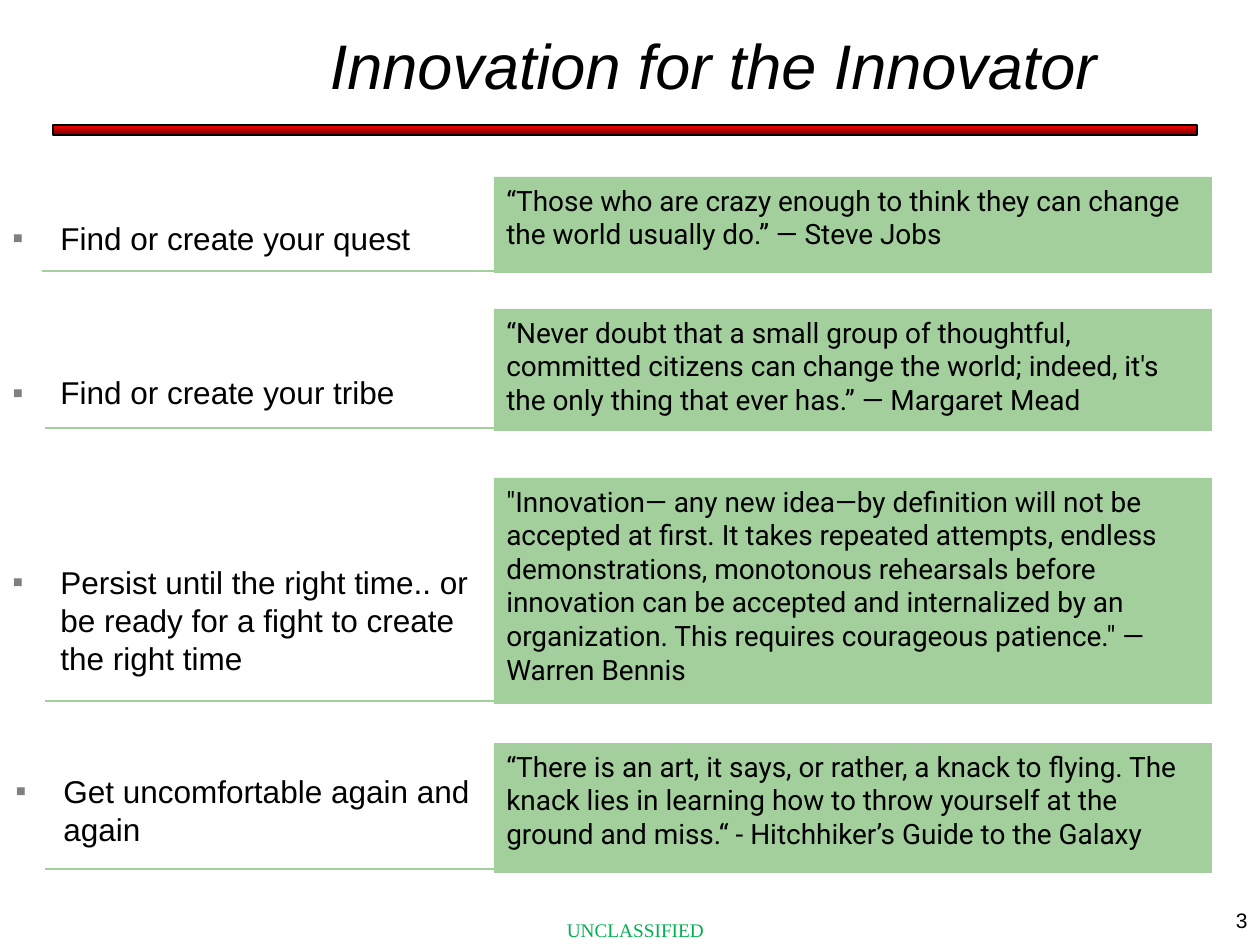
import pptx
import pptx.util
import pptx.dml.color
import pptx.enum.shapes
import pptx.enum.text
import pptx.oxml.ns
from lxml import etree

PX = 914400 // 126
ALIGN = pptx.enum.text.PP_ALIGN
ANCHOR = pptx.enum.text.MSO_ANCHOR
GREEN = "A3CF9D"
QUOTE_LEFT, QUOTE_WIDTH = 494, 718
POINT_WIDTH, RULE_WIDTH = 491, 767
INDENT = 48

ROWS = [
    {"point": "Find or create your quest", "point_box": (0, 213, 77),
     "quote": "“Those who are crazy enough to think they can change the world usually do.” ― Steve Jobs",
     "quote_box": (177, 96), "rule": (42, 271)},
    {"point": "Find or create your tribe", "point_box": (0, 367, 71),
     "quote": "“Never doubt that a small group of thoughtful, committed citizens can change the world; "
              "indeed, it's the only thing that ever has.” ― Margaret Mead",
     "quote_box": (309, 122), "rule": (45, 428)},
    {"point": "Persist until the right time.. or be ready for a fight to create the right time",
     "point_box": (0, 557, 139),
     "quote": "\"Innovation— any new idea—by definition will not be accepted at first. It takes repeated "
              "attempts, endless demonstrations, monotonous rehearsals before innovation can be accepted and "
              "internalized by an organization. This requires courageous patience.\" — Warren Bennis",
     "quote_box": (478, 226), "rule": (45, 701)},
    {"point": "Get uncomfortable again and again", "point_box": (3, 766, 103),
     "quote": "“There is an art, it says, or rather, a knack to flying. The knack lies in learning how to "
              "throw yourself at the ground and miss.“ - Hitchhiker’s Guide to the Galaxy",
     "quote_box": (743, 130), "rule": (45, 869)},
]


def color(value):
    return pptx.dml.color.RGBColor.from_string(value)


def add_child(parent, tag, **attributes):
    return etree.SubElement(parent, pptx.oxml.ns.qn(tag), attributes)


def add_bullet(paragraph):
    properties = paragraph._p.get_or_add_pPr()
    properties.set("marL", str(INDENT * PX))
    properties.set("indent", str(-INDENT * PX))
    add_child(add_child(properties, "a:buClr"), "a:srgbClr", val="808080")
    add_child(properties, "a:buFont", typeface="Arial")
    add_child(properties, "a:buChar", char="▪")


def write(shape, text, size, font="Arial", ink="000000", align=ALIGN.LEFT,
          anchor=ANCHOR.TOP, italic=False, bullet=False):
    frame = shape.text_frame
    frame.word_wrap = True
    frame.vertical_anchor = anchor
    paragraph = frame.paragraphs[0]
    paragraph.alignment = align
    if bullet:
        add_bullet(paragraph)
    run = paragraph.add_run()
    run.text = text
    run.font.name = font
    run.font.size = pptx.util.Pt(size)
    run.font.italic = italic
    run.font.color.rgb = color(ink)


def add_text(slide, box, text, size, **format):
    write(slide.shapes.add_textbox(*(v * PX for v in box)), text, size, **format)


def add_rectangle(slide, box):
    shape = slide.shapes.add_shape(pptx.enum.shapes.MSO_SHAPE.RECTANGLE, *(v * PX for v in box))
    shape.shadow.inherit = False
    return shape


def add_title_bar(slide):
    bar = add_rectangle(slide, (53, 125, 1144, 10))
    bar.fill.gradient()
    bar.fill.gradient_angle = 270
    for stop, value, position in zip(bar.fill.gradient_stops, ("FF0000", "760000"), (0, 1)):
        stop.color.rgb = color(value)
        stop.position = position
    bar.line.color.rgb = color("000000")
    bar.line.width = pptx.util.Pt(0.75)


def add_quote(slide, top, height, text):
    quote = add_rectangle(slide, (QUOTE_LEFT, top, QUOTE_WIDTH, height))
    quote.fill.solid()
    quote.fill.fore_color.rgb = color(GREEN)
    quote.line.fill.background()
    write(quote, text, 16, font="Roboto")


def add_rule(slide, left, top):
    rule = slide.shapes.add_connector(
        pptx.enum.shapes.MSO_CONNECTOR.STRAIGHT,
        left * PX, top * PX, (left + RULE_WIDTH) * PX, top * PX)
    rule.line.color.rgb = color(GREEN)
    rule.line.width = pptx.util.Pt(0.75)
    add_child(rule._element.spPr, "a:effectLst")


def main():
    presentation = pptx.Presentation()
    presentation.slide_width = pptx.util.Inches(10)
    presentation.slide_height = pptx.util.Inches(7.5)
    slide = presentation.slides.add_slide(presentation.slide_layouts[6])

    add_title_bar(slide)
    add_text(slide, (185, 21, 1057, 86), "Innovation for the Innovator", 36,
             align=ALIGN.CENTER, anchor=ANCHOR.MIDDLE, italic=True)
    for row in ROWS:
        left, top, height = row["point_box"]
        add_text(slide, (left, top, POINT_WIDTH, height), row["point"], 18, bullet=True)
        add_quote(slide, *row["quote_box"], row["quote"])
        add_rule(slide, *row["rule"])
    add_text(slide, (378, 912, 515, 36), "UNCLASSIFIED", 11, font="Times New Roman",
             ink="00B050", align=ALIGN.CENTER)
    add_text(slide, (1134, 895, 126, 50), "3", 12, align=ALIGN.RIGHT, anchor=ANCHOR.MIDDLE)

    presentation.save("out.pptx")


if __name__ == "__main__":
    main()
